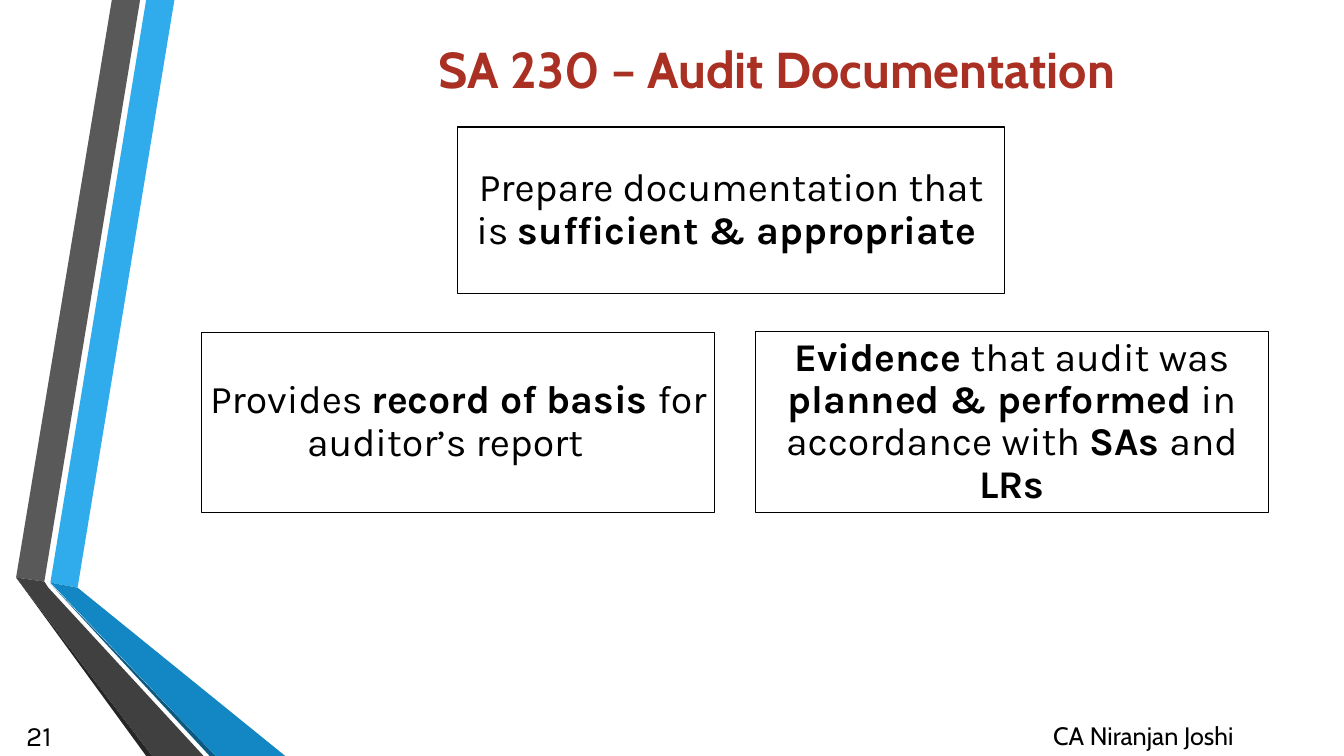
from pptx import Presentation
from pptx.dml.color import RGBColor
from pptx.enum.shapes import MSO_SHAPE
from pptx.enum.text import MSO_ANCHOR, PP_ALIGN
from pptx.util import Inches, Pt


def color(value):
    return RGBColor.from_string(value)


class SlideBuilder:
    heading_font = "Cabin"
    body_font = "Karla"
    black = "000000"
    red = "A93023"

    def __init__(self, slide):
        self.slide = slide

    def band(self, points, fill):
        start, *rest = [(Inches(x), Inches(y)) for x, y in points]
        builder = self.slide.shapes.build_freeform(*start, scale=1.0)
        builder.add_line_segments(rest, close=True)
        shape = builder.convert_to_shape()
        shape.shadow.inherit = False
        shape.fill.solid()
        shape.fill.fore_color.rgb = color(fill)
        shape.line.fill.background()

    def format_run(self, run, size, font, text_color, bold):
        run.font.size = Pt(size)
        run.font.name = font
        run.font.bold = bold
        run.font.color.rgb = color(text_color)

    def label(self, area, text, size, font, align=PP_ALIGN.CENTER,
              anchor=MSO_ANCHOR.MIDDLE, text_color=black, bold=False):
        shape = self.slide.shapes.add_textbox(*map(Inches, area))
        text_frame = shape.text_frame
        text_frame.word_wrap = True
        text_frame.vertical_anchor = anchor
        text_frame.text = text
        paragraph = text_frame.paragraphs[0]
        paragraph.alignment = align
        self.format_run(paragraph.runs[0], size, font, text_color, bold)

    def box(self, area, parts):
        """Outlined box; parts are (text, bold) pairs."""
        shape = self.slide.shapes.add_shape(MSO_SHAPE.RECTANGLE, *map(Inches, area))
        shape.shadow.inherit = False
        shape.fill.background()
        shape.line.color.rgb = color(self.black)
        shape.line.width = Pt(0.75)
        text_frame = shape.text_frame
        text_frame.word_wrap = True
        text_frame.vertical_anchor = MSO_ANCHOR.MIDDLE
        text_frame.margin_left = text_frame.margin_right = Inches(0.02)
        text_frame.margin_top = text_frame.margin_bottom = Inches(0.02)
        paragraph = text_frame.paragraphs[0]
        paragraph.alignment = PP_ALIGN.CENTER
        paragraph.line_spacing = 0.9
        for text, bold in parts:
            run = paragraph.add_run()
            run.text = text
            self.format_run(run, 28, self.body_font, self.black, bold)


def main():
    presentation = Presentation()
    presentation.slide_width = Inches(13.33)
    presentation.slide_height = Inches(7.5)
    slide = presentation.slides.add_slide(presentation.slide_layouts[6])
    builder = SlideBuilder(slide)

    # Folded ribbons on the left
    builder.band([(0.5, 5.78), (0.77, 5.83), (1.73, 0), (1.45, 0)], "30ACEC")
    builder.band([(1.39, 0), (1.11, 0), (0.16, 5.73), (0.44, 5.77)], "595959")
    builder.band([(0.16, 5.73), (1.45, 7.5), (1.51, 7.5)], "262626")
    builder.band([(0.5, 5.79), (2.08, 7.5), (2.14, 7.5)], "0C5A82")
    builder.band([(0.5, 5.78), (2.14, 7.5), (2.83, 7.5), (0.77, 5.83)], "1287C3")
    builder.band([(2.02, 7.5), (0.48, 5.83), (0.44, 5.77), (0.16, 5.73),
                  (1.51, 7.5)], "404040")

    # Title, page number and footer
    builder.label((2.83, 0.32, 9.75, 0.72), "SA 230 – Audit Documentation", 36,
                  builder.heading_font, text_color=builder.red, bold=True)
    builder.label((0.01, 7.09, 0.6, 0.4), "21", 20, builder.body_font,
                  align=PP_ALIGN.RIGHT)
    builder.label((9.59, 7.1, 3.5, 0.4), "CA Niranjan Joshi", 18,
                  builder.heading_font, anchor=MSO_ANCHOR.TOP)

    # Requirement and its two purposes
    builder.box((4.54, 1.26, 5.42, 1.65), [
        ("Prepare documentation that is ", False),
        ("sufficient & appropriate ", True)])
    builder.box((7.49, 3.29, 5.09, 1.79), [
        ("Evidence", True), (" that audit was ", False),
        ("planned & performed", True), (" in accordance with ", False),
        ("SAs ", True), ("and ", False), ("LRs", True)])
    builder.box((2, 3.3, 5.09, 1.78), [
        ("Provides ", False), ("record of basis ", True),
        ("for auditor’s report\t", False)])

    presentation.save("out.pptx")


if __name__ == "__main__":
    main()
